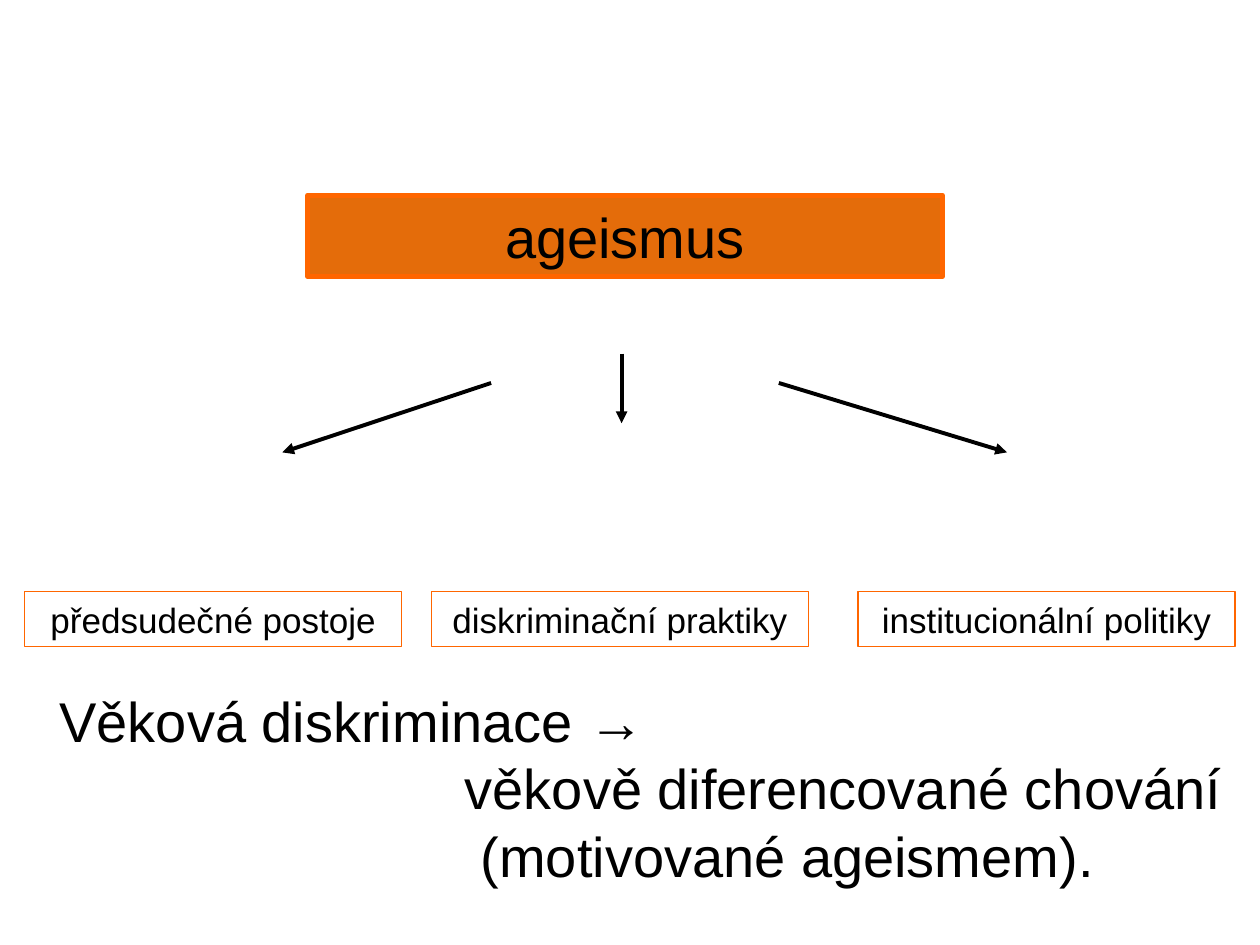
from dataclasses import dataclass

from lxml.etree import SubElement
from pptx import Presentation
from pptx.dml.color import RGBColor
from pptx.enum.shapes import MSO_CONNECTOR, MSO_SHAPE
from pptx.enum.text import MSO_ANCHOR, MSO_AUTO_SIZE, PP_ALIGN
from pptx.oxml.ns import qn
from pptx.util import Cm, Pt


@dataclass(frozen=True)
class Theme:
    font: str = "Arial"
    ink: RGBColor = RGBColor(0x00, 0x00, 0x00)
    fill: RGBColor = RGBColor(0xE4, 0x6C, 0x0A)
    border: RGBColor = RGBColor(0xFF, 0x66, 0x00)
    large: int = 32
    small: int = 20


THEME = Theme()

# All lengths are in centimetres.
TITLE = "ageismus"
TITLE_AREA = (6.2, 3.94, 12.8, 1.63)

# Text and left edge of each box in the row
FORMS = [
    ("předsudečné postoje", 0.5),
    ("diskriminační praktiky", 8.7),
    ("institucionální politiky", 17.3),
]
FORM_TOP, FORM_WIDTH, FORM_HEIGHT = 11.92, 7.6, 1.12

# Start x, start y, end x of each arrow; all have the same drop
ARROWS = [(9.9, 7.72, 5.69), (12.53, 7.13, 12.53), (15.7, 7.72, 20.3)]
ARROW_DROP = 1.4

# Text and left indent of each line
DEFINITION = [
    ("Věková diskriminace →", 1.25),
    ("věkově diferencované chování", 9.42),
    ("(motivované ageismem).", 9.74),
]
DEFINITION_AREA = (-0.3, 13.72, 26.8, 4.37)


def style_font(para, size):
    para.font.name = THEME.font
    para.font.size = Pt(size)
    para.font.color.rgb = THEME.ink


def fill_box(box, text, size, border_width):
    """Put one centred line of text in a box with an orange border."""
    box.line.color.rgb = THEME.border
    box.line.width = Pt(border_width)
    frame = box.text_frame
    frame.auto_size = MSO_AUTO_SIZE.NONE
    frame.vertical_anchor = MSO_ANCHOR.MIDDLE
    frame.text = text
    para = frame.paragraphs[0]
    para.alignment = PP_ALIGN.CENTER
    style_font(para, size)


def add_title(page):
    title = page.shapes.title
    title.left, title.top, title.width, title.height = map(Cm, TITLE_AREA)
    title.fill.solid()
    title.fill.fore_color.rgb = THEME.fill
    fill_box(title, TITLE, THEME.large, 3)


def add_form(page, text, left):
    area = map(Cm, (left, FORM_TOP, FORM_WIDTH, FORM_HEIGHT))
    box = page.shapes.add_shape(MSO_SHAPE.RECTANGLE, *area)
    box.shadow.inherit = False
    box.fill.background()
    fill_box(box, text, THEME.small, 0.75)


def add_arrow(page, start_x, start_y, end_x):
    ends = map(Cm, (start_x, start_y, end_x, start_y + ARROW_DROP))
    arrow = page.shapes.add_connector(MSO_CONNECTOR.STRAIGHT, *ends)
    arrow.line.color.rgb = THEME.ink
    arrow.line.width = Pt(2.25)
    SubElement(arrow.line._get_or_add_ln(), qn("a:tailEnd"), type="triangle")
    SubElement(arrow._element.spPr, qn("a:effectLst"))


def add_definition(page):
    frame = page.shapes.add_textbox(*map(Cm, DEFINITION_AREA)).text_frame
    frame.word_wrap = True
    for number, (text, indent) in enumerate(DEFINITION):
        para = frame.add_paragraph() if number else frame.paragraphs[0]
        para.text = text
        para._p.get_or_add_pPr().set("marL", str(Cm(indent)))
        style_font(para, THEME.large)


def main():
    deck = Presentation()
    deck.slide_width, deck.slide_height = Cm(25.4), Cm(19.05)
    page = deck.slides.add_slide(deck.slide_layouts.get_by_name("Title Only"))
    add_title(page)
    for text, left in FORMS:
        add_form(page, text, left)
    for arrow in ARROWS:
        add_arrow(page, *arrow)
    add_definition(page)
    deck.save("out.pptx")


if __name__ == "__main__":
    main()
